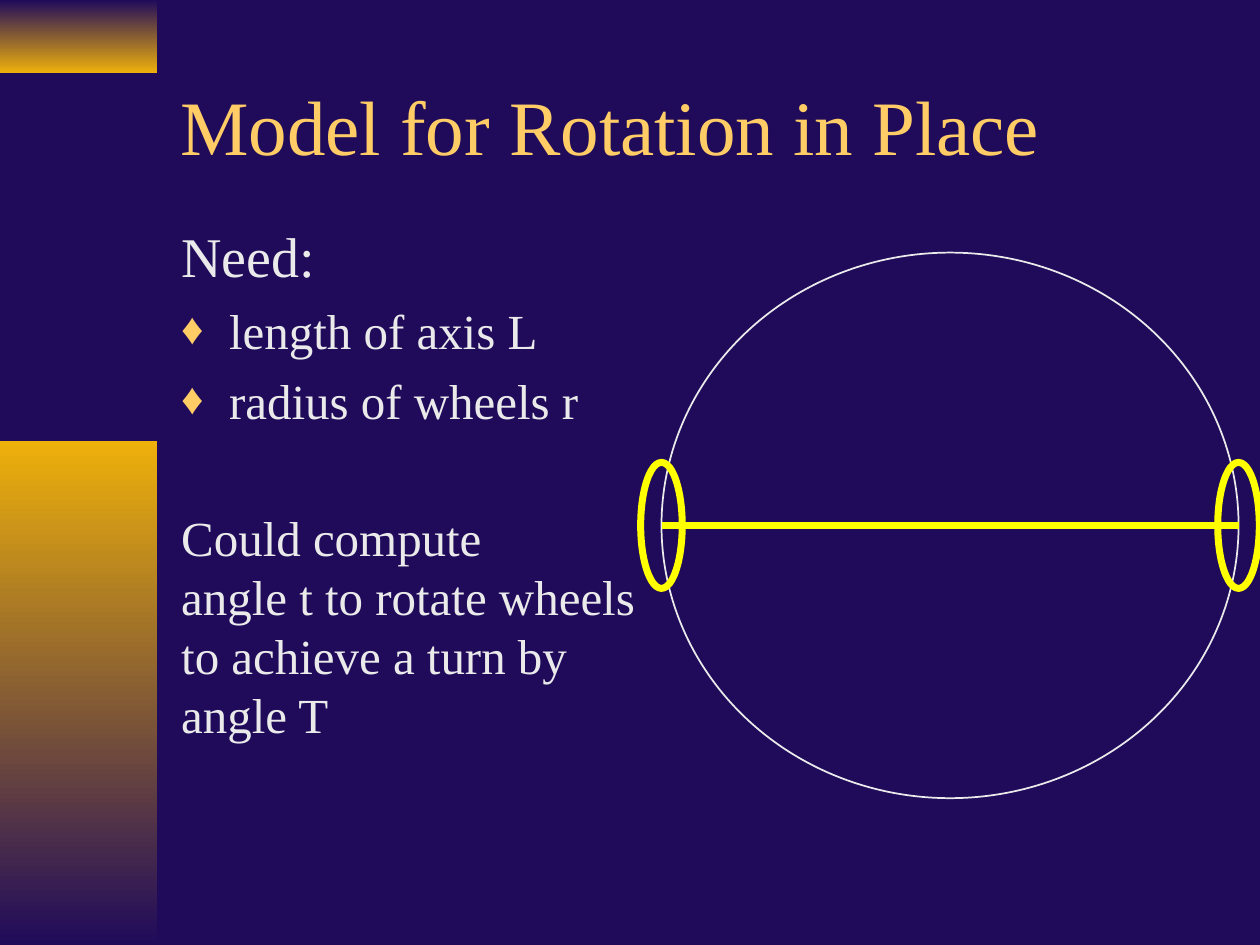
from pptx import Presentation
from pptx.dml.color import RGBColor
from pptx.enum.shapes import MSO_CONNECTOR, MSO_SHAPE
from pptx.enum.text import MSO_ANCHOR, PP_ALIGN
from pptx.oxml.ns import qn
from pptx.util import Inches, Pt
from lxml import etree

RECTANGLE, OVAL = MSO_SHAPE.RECTANGLE, MSO_SHAPE.OVAL
STRAIGHT = MSO_CONNECTOR.STRAIGHT
TOP, MIDDLE, LEFT = MSO_ANCHOR.TOP, MSO_ANCHOR.MIDDLE, PP_ALIGN.LEFT

FONT = "Times New Roman"
COLORS = {
    "background": "200B5B",
    "gold": "EEB00B",
    "title": "FFCC66",
    "text": "EAEAEA",
    "robot": "FFFF00",
}

TITLE = "Model for Rotation in Place"
BODY = [
    ("Need:", {"size": 32}),
    ("length of axis L", {"space_before": 6.4, "bullet": "♦"}),
    ("radius of wheels r", {"space_before": 6.4, "bullet": "♦"}),
    ("Could compute\vangle t to rotate wheels\vto achieve a turn by\vangle T",
     {"space_before": 45}),
]
# top, height, upper colour, lower colour
SIDE_BANDS = [(0, 0.58, "background", "gold"), (3.5, 4, "gold", "background")]
SIDE_BAND_WIDTH = 1.25

AXIS_LEFT, AXIS_RIGHT, AXIS_Y = 5.25, 9.83, 4.17
TURN_HEIGHT = 4.33
WHEEL_WIDTH, WHEEL_HEIGHT = 0.33, 1


def color(name):
    return RGBColor.from_string(COLORS[name])


def add_bullet(paragraph, character, indent=0.38):
    properties = paragraph._p.get_or_add_pPr()
    properties.set("marL", str(Inches(indent)))
    properties.set("indent", str(-Inches(indent)))
    bullet_color = etree.SubElement(properties, qn("a:buClr"))
    etree.SubElement(bullet_color, qn("a:srgbClr"), val=COLORS["title"])
    etree.SubElement(properties, qn("a:buSzPct"), val="90000")
    etree.SubElement(properties, qn("a:buFont"), typeface=FONT)
    etree.SubElement(properties, qn("a:buChar"), char=character)


def write(paragraph, text, size=28, color_name="text", space_before=0, bullet=None):
    paragraph.text = text
    paragraph.alignment = LEFT
    paragraph.space_before = Pt(space_before)
    if bullet:
        add_bullet(paragraph, bullet)
    font = paragraph.font
    font.name, font.size = FONT, Pt(size)
    font.color.rgb = color(color_name)


def place(shape, left, top, width, height):
    shape.left, shape.top = Inches(left), Inches(top)
    shape.width, shape.height = Inches(width), Inches(height)


def add_band(slide, top, height, upper, lower):
    band = slide.shapes.add_shape(
        RECTANGLE, 0, Inches(top), Inches(SIDE_BAND_WIDTH), Inches(height))
    band.shadow.inherit = False
    band.line.fill.background()
    band.fill.gradient()
    band.fill.gradient_angle = 270
    for stop, name, position in zip(band.fill.gradient_stops, (upper, lower), (0, 1)):
        stop.color.rgb = color(name)
        stop.position = position


def add_ring(slide, center_x, width, height, color_name, line_width):
    """Draw an unfilled ellipse centred on the axis height."""
    ring = slide.shapes.add_shape(
        OVAL, Inches(center_x - width / 2), Inches(AXIS_Y - height / 2),
        Inches(width), Inches(height))
    ring.shadow.inherit = False
    ring.fill.background()
    ring.line.color.rgb = color(color_name)
    ring.line.width = Pt(line_width)


def add_axis(slide):
    axis = slide.shapes.add_connector(
        STRAIGHT, Inches(AXIS_LEFT), Inches(AXIS_Y), Inches(AXIS_RIGHT), Inches(AXIS_Y))
    axis.line.color.rgb = color("robot")
    axis.line.width = Pt(4)
    etree.SubElement(axis._element.spPr, qn("a:effectLst"))


def main():
    presentation = Presentation()
    presentation.slide_width, presentation.slide_height = Inches(10), Inches(7.5)
    slide = presentation.slides.add_slide(presentation.slide_layouts[5])
    slide.background.fill.solid()
    slide.background.fill.fore_color.rgb = color("background")

    for band in SIDE_BANDS:
        add_band(slide, *band)

    title = slide.shapes.title
    place(title, 1.33, 0.33, 8.5, 1.32)
    title.text_frame.vertical_anchor = MIDDLE
    write(title.text_frame.paragraphs[0], TITLE, size=44, color_name="title")

    body = slide.shapes.add_textbox(0, 0, 0, 0)
    place(body, 1.34, 1.71, 8.5, 4.92)
    frame = body.text_frame
    frame.word_wrap = True
    frame.vertical_anchor = TOP
    for index, (text, style) in enumerate(BODY):
        paragraph = frame.add_paragraph() if index else frame.paragraphs[0]
        write(paragraph, text, **style)

    add_ring(slide, (AXIS_LEFT + AXIS_RIGHT) / 2, AXIS_RIGHT - AXIS_LEFT,
             TURN_HEIGHT, "text", 1)
    add_axis(slide)
    for center_x in (AXIS_RIGHT, AXIS_LEFT):
        add_ring(slide, center_x, WHEEL_WIDTH, WHEEL_HEIGHT, "robot", 4)

    presentation.save("out.pptx")


if __name__ == "__main__":
    main()
